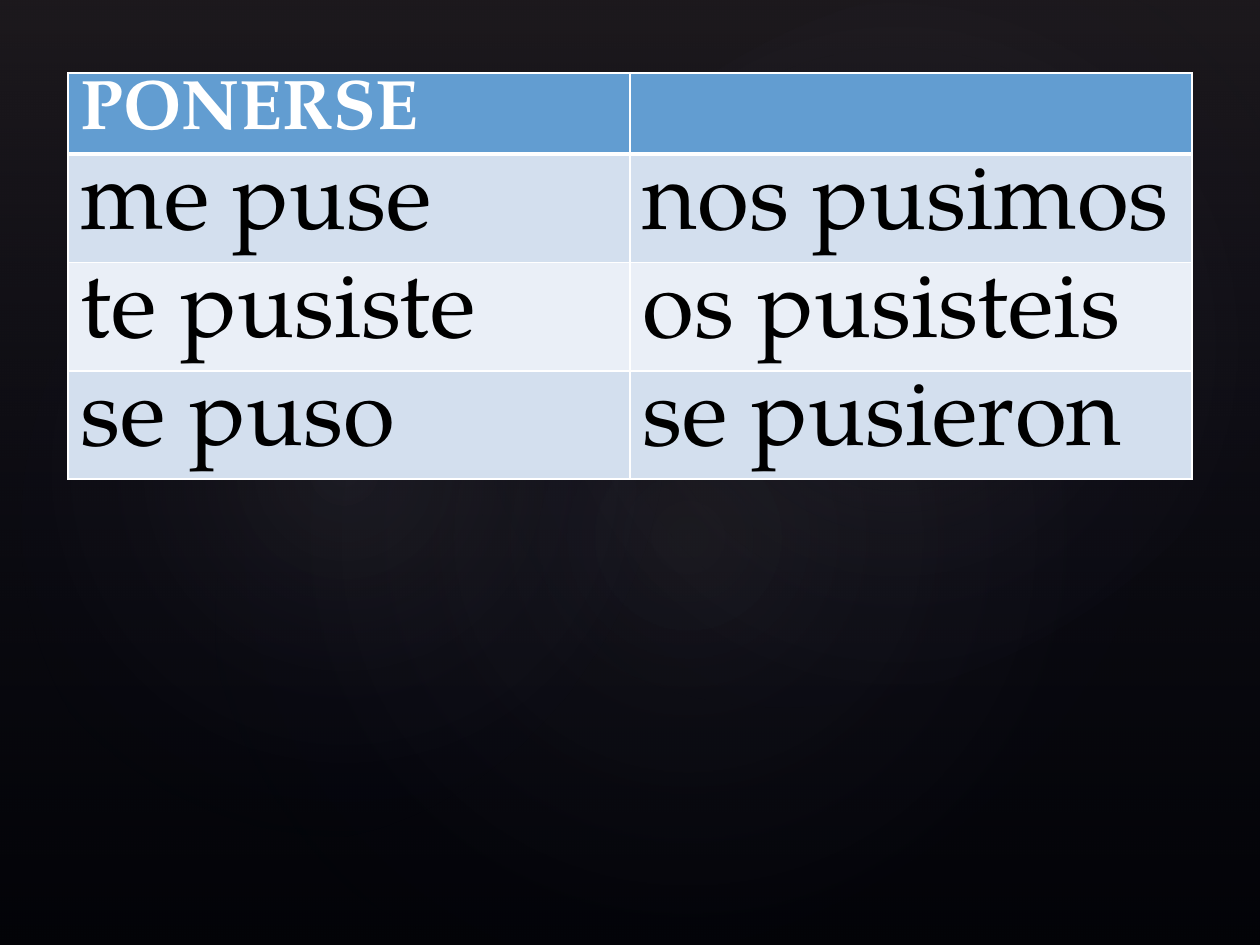
from lxml import etree
from pptx import Presentation
from pptx.dml.color import RGBColor
from pptx.enum.shapes import MSO_SHAPE
from pptx.oxml import parse_xml
from pptx.oxml.ns import nsdecls, qn
from pptx.util import Inches, Pt

RECTANGLE, OVAL = MSO_SHAPE.RECTANGLE, MSO_SHAPE.OVAL
BLACK = RGBColor(0x00, 0x00, 0x00)
WHITE = RGBColor(0xFF, 0xFF, 0xFF)
BLUE = RGBColor(0x62, 0x9D, 0xD1)
PALE = RGBColor(0xD3, 0xDF, 0xEE)
PALER = RGBColor(0xEA, 0xEF, 0xF7)
PLUM = RGBColor(0x50, 0x46, 0x52)
NAVY = RGBColor(0x24, 0x28, 0x52)
MIST = RGBColor(0xC4, 0xBC, 0xC6)

FONT = "TeX Gyre Pagella"
WIDTH, HEIGHT = 10, 7.5
CONJUGATION = [
    ("PONERSE", ""),
    ("me puse", "nos pusimos"),
    ("te pusiste", "os pusisteis"),
    ("se puso", "se pusieron"),
]
HEADER = {"size": Pt(40), "bold": True, "name": FONT}
BODY = {"size": Pt(54), "bold": False, "name": FONT}
LEFT, TOP, COLUMN = 0.54, 0.58, 4.46
HEADER_ROW, BODY_ROW = 0.64, 0.86

LINEAR = '<a:lin ang="5400000" scaled="0"/>'
RADIAL = ('<a:path path="circle"><a:fillToRect l="50000" t="50000" '
          'r="50000" b="50000"/></a:path>')
VEIL = [(0, PLUM, 36), (100, NAVY, 10)]
GLOWS = [
    ((1.5, 1.14, 7.92, 6.24), 328.7, 7),
    ((-0.3, 1.28, 6.06, 4.9), 294.3, 8),
    ((3.58, 0.13, 7.09, 5.2), 328.7, 8),
]


def add_gradient_shape(page, kind, place, stops, direction, rotation=0):
    shape = page.shapes.add_shape(kind, *map(Inches, place))
    shape.rotation = rotation
    shape.shadow.inherit = False
    shape.line.fill.background()
    marks = "".join(
        f'<a:gs pos="{position * 1000}"><a:srgbClr val="{color}">'
        f'<a:alpha val="{opacity * 1000}"/></a:srgbClr></a:gs>'
        for position, color, opacity in stops)
    gradient = parse_xml(
        f'<a:gradFill {nsdecls("a")} rotWithShape="1">'
        f'<a:gsLst>{marks}</a:gsLst>{direction}</a:gradFill>')
    shape.element.spPr.find(qn("a:prstGeom")).addnext(gradient)


def set_borders(cell, widths):
    properties = cell._tc.get_or_add_tcPr()
    for index, (side, width) in enumerate(widths.items()):
        line = etree.Element(qn(f"a:{side}"), w=str(Pt(width)))
        fill = etree.SubElement(line, qn("a:solidFill"))
        etree.SubElement(fill, qn("a:srgbClr"), val=str(WHITE))
        properties.insert(index, line)


def add_conjugation_table(page):
    rows, columns = len(CONJUGATION), len(CONJUGATION[0])
    height = HEADER_ROW + BODY_ROW * (rows - 1)
    table = page.shapes.add_table(
        rows, columns, Inches(LEFT), Inches(TOP),
        Inches(COLUMN * columns), Inches(height)).table
    for column in table.columns:
        column.width = Inches(COLUMN)
    for r, words in enumerate(CONJUGATION):
        is_header = r == 0
        table.rows[r].height = Inches(HEADER_ROW if is_header else BODY_ROW)
        for c, word in enumerate(words):
            cell = table.cell(r, c)
            cell.fill.solid()
            cell.fill.fore_color.rgb = BLUE if is_header else (PALER, PALE)[r % 2]
            set_borders(cell, {"lnL": 1, "lnR": 1,
                               "lnT": 3 if r == 1 else 1,
                               "lnB": 3 if is_header else 1})
            para = cell.text_frame.paragraphs[0]
            para.text = word
            for name, value in (HEADER if is_header else BODY).items():
                setattr(para.font, name, value)
            para.font.color.rgb = WHITE if is_header else BLACK
            for span in para.runs:
                span.font.name = FONT


def main():
    deck = Presentation()
    deck.slide_width, deck.slide_height = Inches(WIDTH), Inches(HEIGHT)
    page = deck.slides.add_slide(deck.slide_layouts[6])
    page.background.fill.solid()
    page.background.fill.fore_color.rgb = BLACK
    add_gradient_shape(page, RECTANGLE, (0, 0, WIDTH, HEIGHT), VEIL, LINEAR)
    for place, rotation, opacity in GLOWS:
        stops = [(0, MIST, opacity), (58, NAVY, 0), (100, NAVY, 0)]
        add_gradient_shape(page, OVAL, place, stops, RADIAL, rotation)
    add_conjugation_table(page)
    deck.save("out.pptx")


if __name__ == "__main__":
    main()
